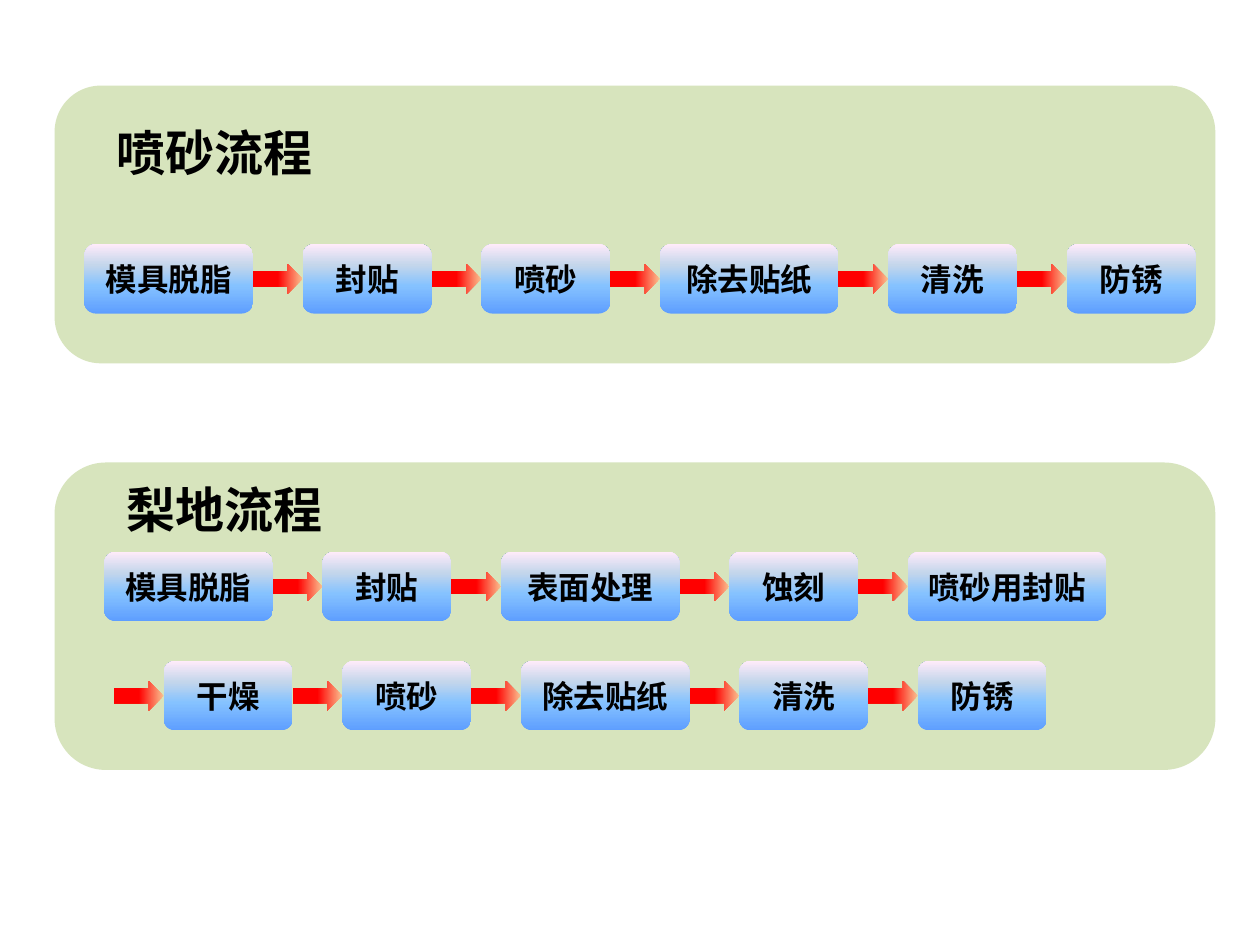
from copy import deepcopy
from dataclasses import dataclass
from typing import Any

from pptx import Presentation
from pptx import util as u
from pptx.dml.color import RGBColor
from pptx.enum import lang, shapes, text
from pptx.oxml import ns


def colour(code):
    return RGBColor.from_string(code)


@dataclass
class FlowSlide:
    """Draws process flows on one slide, with all lengths in points."""

    slide: Any
    font: str = "Calibri"
    ink: str = "000000"
    panel_fill: str = "D7E4BD"
    step_stops: tuple = ((0, "5E9EFF"), (0.4, "85C2FF"), (0.7, "C4D6EB"), (1, "FFEBFA"))
    arrow_stops: tuple = ((0, "FAC090"), (0.5, "FF0000"))
    step_height: float = 39.7
    arrow_width: float = 28.35
    arrow_height: float = 17

    def shape(self, preset, left, top, width, height):
        shape = self.slide.shapes.add_shape(
            preset, u.Pt(left), u.Pt(top), u.Pt(width), u.Pt(height))
        shape.shadow.inherit = False
        shape.line.fill.background()
        return shape

    def gradient(self, shape, stops, angle):
        shape.fill.gradient()
        shape.fill.gradient_angle = angle
        stop_list = shape._element.spPr.find(ns.qn("a:gradFill")).find(ns.qn("a:gsLst"))
        for _ in stops[2:]:
            stop_list.append(deepcopy(stop_list[-1]))
        for stop, (position, code) in zip(shape.fill.gradient_stops, stops):
            stop.position = position
            stop.color.rgb = colour(code)

    def add_words(self, paragraph, words, size):
        run = paragraph.add_run()
        run.text = words
        run.font.name = self.font
        run.font.size = u.Pt(size)
        run.font.bold = True
        run.font.color.rgb = colour(self.ink)
        run.font.language_id = lang.MSO_LANGUAGE_ID.SIMPLIFIED_CHINESE

    def panel(self, top, height):
        panel = self.shape(shapes.MSO_SHAPE.ROUNDED_RECTANGLE, 31.2, top, 663.3, height)
        panel.fill.solid()
        panel.fill.fore_color.rgb = colour(self.panel_fill)

    def heading(self, words, left, top):
        heading = self.slide.shapes.add_textbox(
            u.Pt(left), u.Pt(top), u.Pt(128), u.Pt(41)).text_frame
        heading.word_wrap = False
        heading.auto_size = text.MSO_AUTO_SIZE.SHAPE_TO_FIT_TEXT
        self.add_words(heading.paragraphs[0], words, 28)

    def step(self, words, left, top, width):
        step = self.shape(
            shapes.MSO_SHAPE.ROUNDED_RECTANGLE, left, top, width, self.step_height)
        self.gradient(step, self.step_stops, 90)
        step.text_frame.vertical_anchor = text.MSO_ANCHOR.MIDDLE
        label = step.text_frame.paragraphs[0]
        label.alignment = text.PP_ALIGN.CENTER
        self.add_words(label, words, 18)

    def arrow(self, left, row_top):
        top = row_top + (self.step_height - self.arrow_height) / 2
        arrow = self.shape(
            shapes.MSO_SHAPE.RIGHT_ARROW, left, top, self.arrow_width, self.arrow_height)
        self.gradient(arrow, self.arrow_stops, 180)

    def flow(self, left, top, steps, continued=False):
        for index, (words, width) in enumerate(steps):
            if index or continued:
                self.arrow(left, top)
                left += self.arrow_width
            self.step(words, left, top, width)
            left += width


def main():
    deck = Presentation()
    deck.slide_width, deck.slide_height = u.Pt(720), u.Pt(540)
    page = FlowSlide(deck.slides.add_slide(deck.slide_layouts[6]))
    short, medium, wide, widest = 73.7, 96.4, 102.05, 113.4

    page.panel(48.9, 158.7)
    page.heading("喷砂流程", 59.6, 66.5)
    page.flow(48.2, 139.5, [
        ("模具脱脂", medium), ("封贴", short), ("喷砂", short),
        ("除去贴纸", wide), ("清洗", short), ("防锈", short)])

    page.panel(264.3, 175.7)
    page.heading("梨地流程", 65.3, 270.3)
    page.flow(59.5, 315.3, [
        ("模具脱脂", medium), ("封贴", short), ("表面处理", wide),
        ("蚀刻", short), ("喷砂用封贴", widest)])
    page.flow(65.2, 377.7, [
        ("干燥", short), ("喷砂", short), ("除去贴纸", medium),
        ("清洗", short), ("防锈", short)], continued=True)

    deck.save("out.pptx")


if __name__ == "__main__":
    main()
